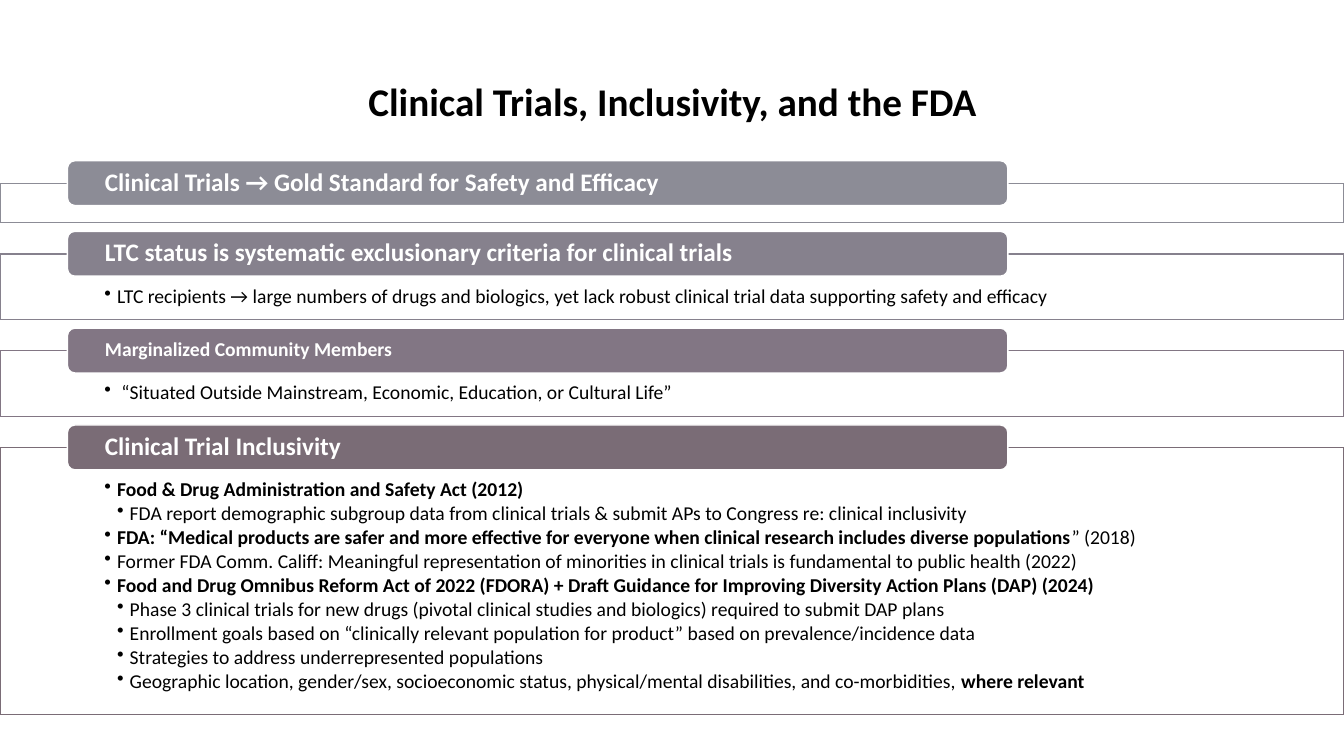
import dataclasses

import lxml.etree
import pptx
import pptx.dml.color
import pptx.enum.shapes
import pptx.enum.text
import pptx.oxml.ns
import pptx.util

Cm = pptx.util.Cm
Pt = pptx.util.Pt
Anchor = pptx.enum.text.MSO_ANCHOR
Align = pptx.enum.text.PP_ALIGN
Preset = pptx.enum.shapes.MSO_SHAPE

COLORS = {
    "white": "FFFFFF",
    "black": "000000",
    "standard": "8C8C96",
    "exclusion": "86818D",
    "community": "827684",
    "inclusivity": "7A6C76",
}

SLIDE_WIDTH = 33.87
FIRST_PANEL_TOP = 4.62
PANEL_GAP = 0.79
BAR_LEFT = 1.7
BAR_WIDTH = 23.7
BAR_HEIGHT = 1.13
BAR_RISE = 0.57
BULLET_INDENT = 0.32


@dataclasses.dataclass
class Point:
    text: str
    level: int = 1
    bold: bool = False
    ending: str = ""


@dataclasses.dataclass
class Section:
    heading: str
    color: str
    height: float
    heading_size: int = 18
    points: list[Point] = dataclasses.field(default_factory=list)


SECTIONS = [
    Section("Clinical Trials → Gold Standard for Safety and Efficacy", "standard", 0.99),
    Section(
        "LTC status is systematic exclusionary criteria for clinical trials", "exclusion", 1.65,
        points=[
            Point("LTC recipients → large numbers of drugs and biologics, yet lack robust "
                  "clinical trial data supporting safety and efficacy"),
        ],
    ),
    Section(
        "Marginalized Community Members", "community", 1.65, heading_size=14,
        points=[Point(" “Situated Outside Mainstream, Economic, Education, or Cultural Life”")],
    ),
    Section(
        "Clinical Trial Inclusivity", "inclusivity", 6.73,
        points=[
            Point("Food & Drug Administration and Safety Act (2012)", bold=True),
            Point("FDA report demographic subgroup data from clinical trials & submit APs "
                  "to Congress re: clinical inclusivity", level=2),
            Point("FDA: “Medical products are safer and more effective for everyone when "
                  "clinical research includes diverse populations", bold=True, ending="” (2018)"),
            Point("Former FDA Comm. Califf: Meaningful representation of minorities in "
                  "clinical trials is fundamental to public health (2022)"),
            Point("Food and Drug Omnibus Reform Act of 2022 (FDORA) + Draft Guidance for "
                  "Improving Diversity Action Plans (DAP) (2024)", bold=True),
            Point("Phase 3 clinical trials for new drugs (pivotal clinical studies and "
                  "biologics) required to submit DAP plans", level=2),
            Point("Enrollment goals based on “clinically relevant population for product” "
                  "based on prevalence/incidence data", level=2),
            Point("Strategies to address underrepresented populations", level=2),
            Point("Geographic location, gender/sex, socioeconomic status, physical/mental "
                  "disabilities, and co-morbidities, ", level=2, ending="where relevant"),
        ],
    ),
]


def rgb(name: str) -> pptx.dml.color.RGBColor:
    return pptx.dml.color.RGBColor.from_string(COLORS[name])


def write_text(paragraph, text: str, *, size: int = 14, color: str = "black",
               bold: bool = False, align=Align.LEFT, spacing: float = 0.9,
               after: float = 0) -> None:
    paragraph.alignment = align
    paragraph.line_spacing = spacing
    paragraph.space_before = Pt(0)
    paragraph.space_after = Pt(after)
    run = paragraph.add_run()
    run.text = text
    run.font.name = "Calibri"
    run.font.size = Pt(size)
    run.font.bold = bold
    run.font.color.rgb = rgb(color)


def add_bullet(paragraph, level: int) -> None:
    paragraph.level = level
    properties = paragraph._p.get_or_add_pPr()
    properties.set("marL", str(Cm(BULLET_INDENT * level)))
    properties.set("indent", str(-Cm(BULLET_INDENT)))
    bullet = lxml.etree.SubElement(properties, pptx.oxml.ns.qn("a:buChar"))
    bullet.set("char", "•")


def add_block(slide, preset, left: float, top: float, width: float, height: float, *,
              fill: str, line: str, anchor, side_margin: float,
              top_margin: float = 0, bottom_margin: float = 0):
    block = slide.shapes.add_shape(preset, Cm(left), Cm(top), Cm(width), Cm(height))
    block.shadow.inherit = False
    block.fill.solid()
    block.fill.fore_color.rgb = rgb(fill)
    block.line.color.rgb = rgb(line)
    block.line.width = Pt(1)
    frame = block.text_frame
    frame.word_wrap = True
    frame.vertical_anchor = anchor
    frame.margin_left = frame.margin_right = Cm(side_margin)
    frame.margin_top, frame.margin_bottom = Cm(top_margin), Cm(bottom_margin)
    return frame


def add_section(slide, section: Section, top: float) -> None:
    panel = add_block(slide, Preset.RECTANGLE, 0, top, SLIDE_WIDTH, section.height,
                      fill="white", line=section.color, anchor=Anchor.TOP,
                      side_margin=2.63, top_margin=0.81, bottom_margin=0.28)
    for index, point in enumerate(section.points):
        paragraph = panel.add_paragraph() if index else panel.paragraphs[0]
        write_text(paragraph, point.text, bold=point.bold, after=2)
        if point.ending:
            write_text(paragraph, point.ending, bold=not point.bold, after=2)
        add_bullet(paragraph, point.level)

    bar = add_block(slide, Preset.ROUNDED_RECTANGLE, BAR_LEFT, top - BAR_RISE,
                    BAR_WIDTH, BAR_HEIGHT, fill=section.color, line="white",
                    anchor=Anchor.MIDDLE, side_margin=0.89)
    write_text(bar.paragraphs[0], section.heading, size=section.heading_size,
               color="white", bold=True)


def add_title(slide) -> None:
    title = slide.shapes.title
    title.left, title.top, title.width, title.height = Cm(3), Cm(1.24), Cm(27.89), Cm(2.46)
    title.text_frame.vertical_anchor = Anchor.MIDDLE
    title.text_frame.auto_size = pptx.enum.text.MSO_AUTO_SIZE.NONE
    write_text(title.text_frame.paragraphs[0], "Clinical Trials, Inclusivity, and the FDA",
               size=28, bold=True, align=Align.CENTER, spacing=1.1)


def main() -> None:
    presentation = pptx.Presentation()
    presentation.slide_width, presentation.slide_height = Cm(SLIDE_WIDTH), Cm(19.05)
    slide = presentation.slides.add_slide(presentation.slide_layouts[5])
    add_title(slide)
    top = FIRST_PANEL_TOP
    for section in SECTIONS:
        add_section(slide, section, top)
        top += section.height + PANEL_GAP
    presentation.save("out.pptx")


if __name__ == "__main__":
    main()
